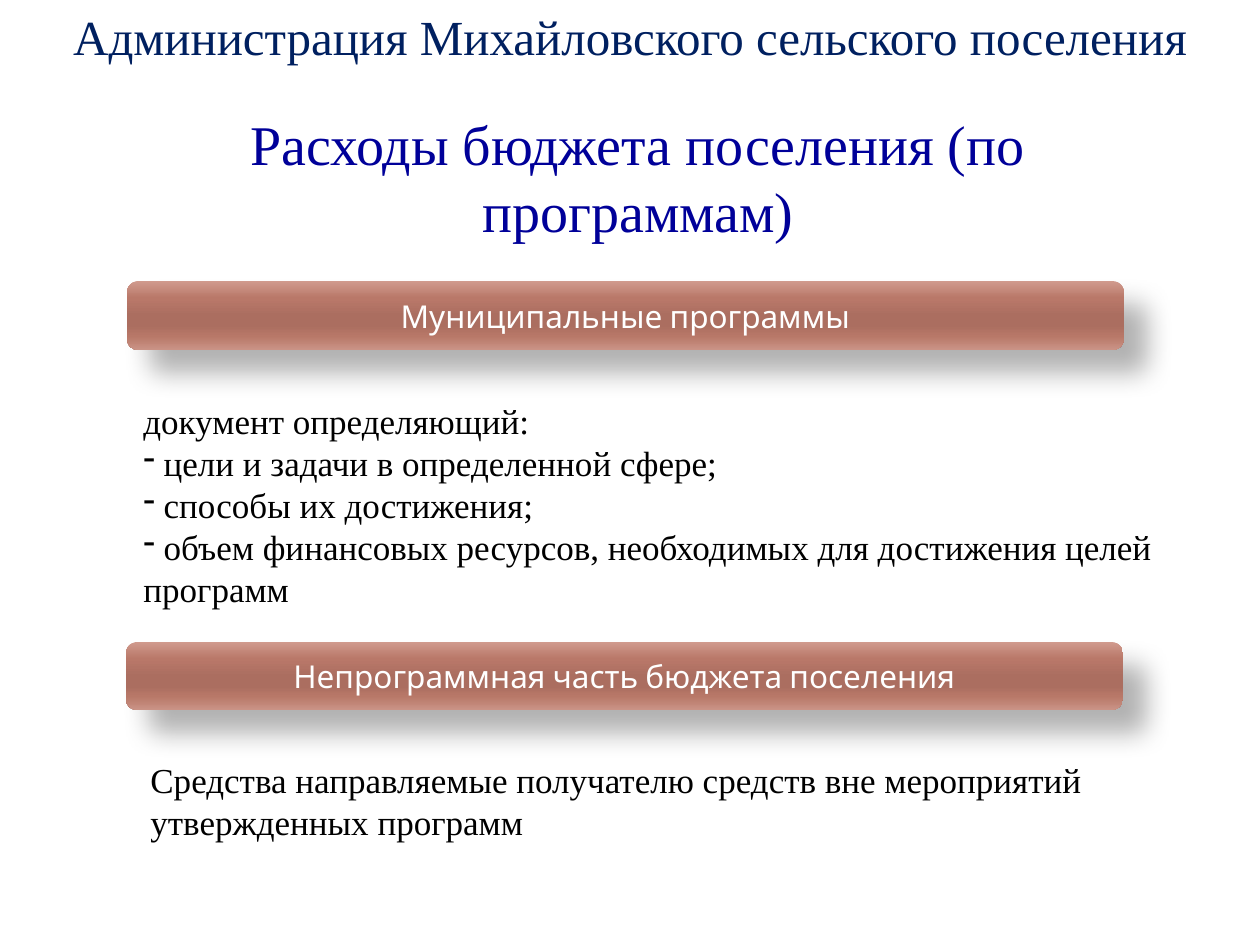
from dataclasses import dataclass

import pptx
import pptx.dml.color
import pptx.enum.shapes
import pptx.enum.text
import pptx.oxml.ns
import pptx.util
from lxml import etree

RGBColor = pptx.dml.color.RGBColor
Align = pptx.enum.text.PP_ALIGN
Anchor = pptx.enum.text.MSO_ANCHOR
qn = pptx.oxml.ns.qn

PX_PER_INCH = 126
NAVY = RGBColor(0x00, 0x20, 0x60)
BLUE = RGBColor(0x00, 0x00, 0x99)
BLACK = RGBColor(0x00, 0x00, 0x00)
WHITE = RGBColor(0xFF, 0xFF, 0xFF)
BAR_STOPS = (
    (0, RGBColor(0xD0, 0x9A, 0x8D)),
    (25, RGBColor(0xB9, 0x78, 0x69)),
    (50, RGBColor(0xAB, 0x6E, 0x60)),
    (65, RGBColor(0xAB, 0x6E, 0x60)),
    (80, RGBColor(0xB8, 0x78, 0x68)),
    (100, RGBColor(0xCA, 0x93, 0x86)),
)

# Text formats
HEADER = {"name": "Times New Roman", "size": pptx.util.Pt(28), "color": NAVY}
TITLE = {"name": "Times New Roman", "size": pptx.util.Pt(32), "color": BLUE}
BODY = {"name": "Times New Roman", "size": pptx.util.Pt(20), "color": BLACK}
BAR = {"name": "Cabin", "size": pptx.util.Pt(18), "color": WHITE}


@dataclass(frozen=True)
class Box:
    left: int
    top: int
    width: int
    height: int


@dataclass(frozen=True)
class TextBlock:
    box: Box
    lines: tuple[str, ...]
    text_format: dict
    alignment: Align = Align.LEFT
    bullets: tuple[str, ...] = ()


@dataclass(frozen=True)
class HeadingBar:
    box: Box
    label: str


def emu(px: int) -> int:
    return round(px * 914400 / PX_PER_INCH)


def place(box: Box) -> tuple[int, ...]:
    return tuple(emu(px) for px in (box.left, box.top, box.width, box.height))


def add_child(parent, tag: str, **attributes):
    return etree.SubElement(parent, qn(tag), {key: str(value) for key, value in attributes.items()})


def write_paragraph(paragraph, text: str, text_format: dict, alignment: Align) -> None:
    paragraph.alignment = alignment
    run = paragraph.add_run()
    run.text = text
    for key, value in text_format.items():
        if key == "color":
            run.font.color.rgb = value
        else:
            setattr(run.font, key, value)


def add_dash(paragraph) -> None:
    properties = paragraph._p.get_or_add_pPr()
    add_child(properties, "a:buFontTx")
    add_child(properties, "a:buChar", char="-")


def draw_text(slide, block: TextBlock) -> None:
    frame = slide.shapes.add_textbox(*place(block.box)).text_frame
    frame.word_wrap = True
    for index, text in enumerate(block.lines + block.bullets):
        paragraph = frame.add_paragraph() if index else frame.paragraphs[0]
        write_paragraph(paragraph, text, block.text_format, block.alignment)
        if index >= len(block.lines):
            add_dash(paragraph)


def draw_bar(slide, bar: HeadingBar) -> None:
    shape = slide.shapes.add_shape(pptx.enum.shapes.MSO_SHAPE.ROUNDED_RECTANGLE, *place(bar.box))
    shape.line.fill.background()

    # Vertical gradient
    shape.fill.gradient()
    shape.fill.gradient_angle = 270
    properties = shape._element.spPr
    stops = properties.find(".//" + qn("a:gsLst"))
    for stop in list(stops):
        stops.remove(stop)
    for percent, color in BAR_STOPS:
        stop = add_child(stops, "a:gs", pos=percent * 1000)
        add_child(stop, "a:srgbClr", val=color)

    # Soft shadow to the lower right
    shape.shadow.inherit = False
    shadow = add_child(
        properties.find(qn("a:effectLst")), "a:outerShdw",
        blurRad=pptx.util.Pt(15), dist=pptx.util.Pt(18), dir=45 * 60000,
        algn="tl", rotWithShape=0,
    )
    add_child(add_child(shadow, "a:srgbClr", val=BLACK), "a:alpha", val=30000)

    frame = shape.text_frame
    frame.word_wrap = True
    frame.vertical_anchor = Anchor.MIDDLE
    write_paragraph(frame.paragraphs[0], bar.label, BAR, Align.CENTER)


TEXT_BLOCKS = (
    TextBlock(Box(0, 0, 1260, 72), ("Администрация Михайловского сельского поселения",),
              HEADER, Align.CENTER),
    TextBlock(Box(87, 103, 1102, 149), ("Расходы бюджета поселения (по программам)",),
              TITLE, Align.CENTER),
    TextBlock(Box(131, 393, 1094, 224), ("документ определяющий:",), BODY, bullets=(
        " цели и задачи в определенной сфере;",
        " способы их достижения;",
        " объем финансовых ресурсов, необходимых для достижения целей программ",
    )),
    TextBlock(Box(138, 752, 1074, 97),
              ("Средства направляемые получателю средств вне мероприятий утвержденных программ",),
              BODY),
)
HEADING_BARS = (
    HeadingBar(Box(127, 281, 997, 69), "Муниципальные программы"),
    HeadingBar(Box(126, 642, 997, 68), "Непрограммная часть бюджета поселения"),
)


def main() -> None:
    presentation = pptx.Presentation()
    presentation.slide_width = emu(1260)
    presentation.slide_height = emu(945)
    slide = presentation.slides.add_slide(presentation.slide_layouts[6])
    for bar in HEADING_BARS:
        draw_bar(slide, bar)
    for block in TEXT_BLOCKS:
        draw_text(slide, block)
    presentation.save("out.pptx")


if __name__ == "__main__":
    main()
